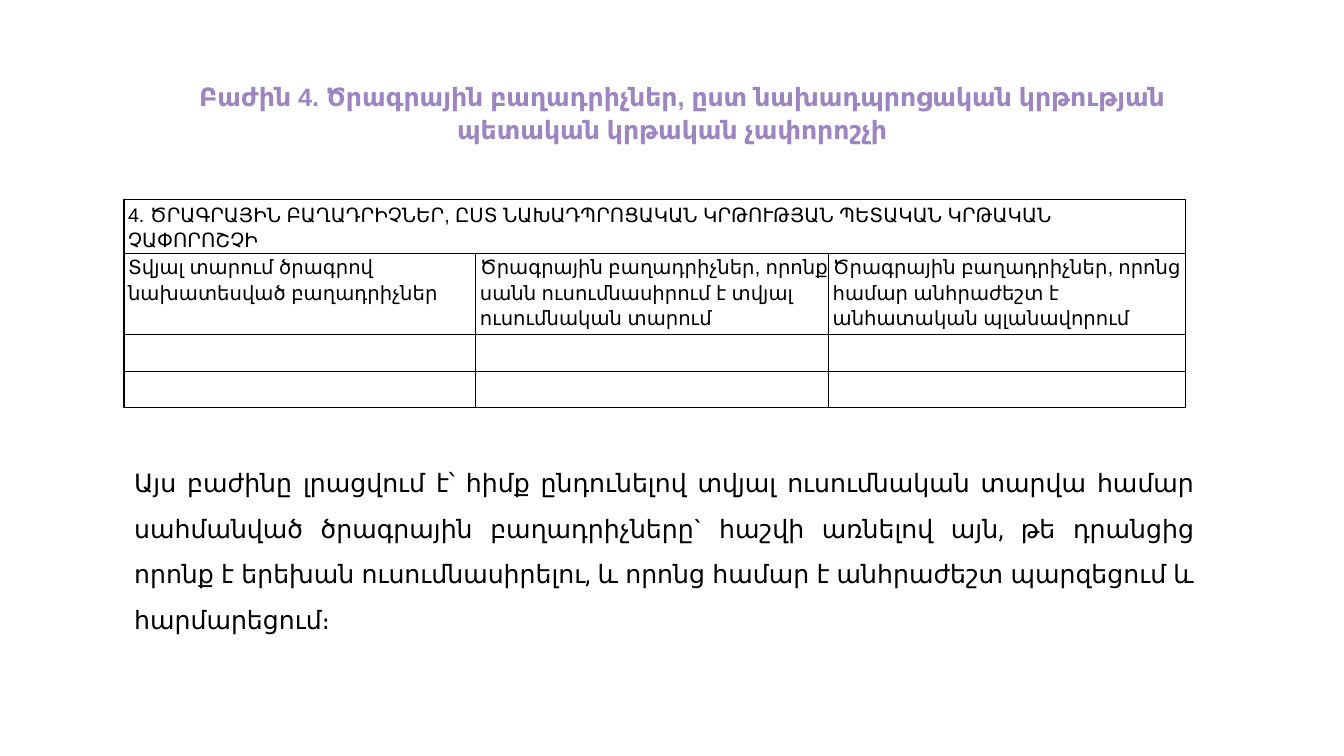
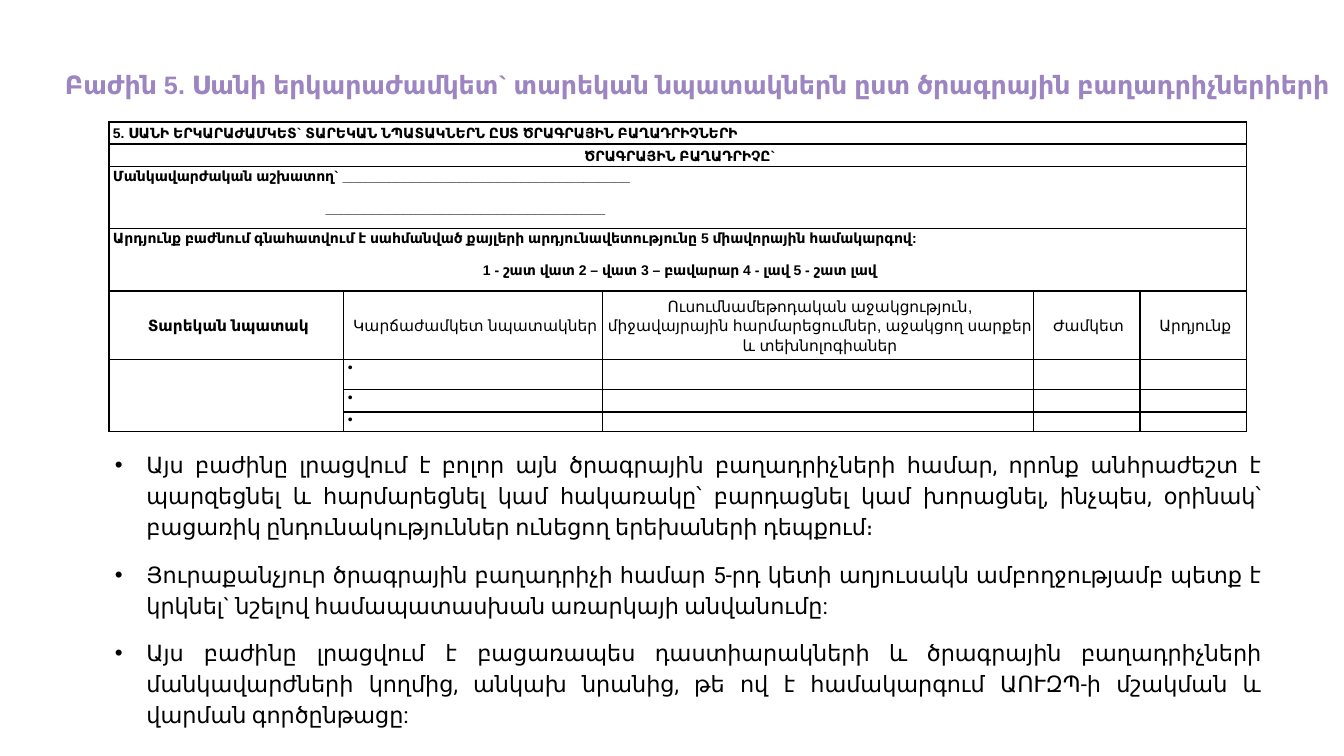
from dataclasses import dataclass
from typing import Any, NamedTuple

from lxml.etree import SubElement
from pptx import Presentation as new_presentation
from pptx.dml.color import RGBColor
from pptx.enum.text import MSO_ANCHOR as Anchor, MSO_AUTO_SIZE as AutoSize, PP_ALIGN as Align
from pptx.oxml.ns import qn
from pptx.presentation import Presentation
from pptx.shapes.placeholder import SlidePlaceholder
from pptx.slide import Slide
from pptx.table import _Cell as TableCell
from pptx.text.text import TextFrame, _Paragraph as TextParagraph
from pptx.util import Pt


@dataclass(frozen=True)
class Theme:
    title_color: str = "9C85C0"
    text_color: str = "000000"
    cell_color: str = "FFFFFF"
    border_color: str = "000000"
    border_width: float = 1
    cell_inset: float = 2.88
    title_font: str = "Arial"
    body_font: str = "Roboto"
    title_size: float = 18
    lead_size: float = 18
    list_size: float = 16
    table_size: float = 14
    form_size: float = 10
    heading_size: float = 11


THEME = Theme()


class Box(NamedTuple):
    left: float
    top: float
    width: float
    height: float


@dataclass(frozen=True)
class Run:
    text: str
    size: float
    font: str = THEME.title_font
    color: str = THEME.text_color
    bold: bool = False


@dataclass(frozen=True)
class Paragraph:
    runs: tuple[Run, ...]
    align: Align = Align.LEFT
    line_spacing: float = 1.15
    space_after: float = 10
    margin: float = 0
    indent: float = 0
    bullet: str = ""


@dataclass(frozen=True)
class Cell:
    row: int
    column: int
    paragraphs: tuple[Paragraph, ...]
    anchor: Anchor = Anchor.TOP


@dataclass(frozen=True)
class Grid:
    left: float
    top: float
    columns: tuple[float, ...]
    rows: tuple[float, ...]
    cells: tuple[Cell, ...]
    spans: tuple[tuple[int, int, int, int], ...]
    blank_size: float


@dataclass(frozen=True)
class Page:
    title: Paragraph
    title_box: Box
    body: tuple[Paragraph, ...]
    body_box: Box
    grid: Grid


def apply(target: Any, formats: dict[str, Any]) -> None:
    for name, value in formats.items():
        setattr(target, name, value)


def fill_paragraph(target: TextParagraph, paragraph: Paragraph) -> None:
    apply(target, {
        "alignment": paragraph.align,
        "line_spacing": paragraph.line_spacing,
        "space_before": Pt(0),
        "space_after": Pt(paragraph.space_after),
    })
    properties = target._p.get_or_add_pPr()
    properties.set("marL", str(Pt(paragraph.margin)))
    properties.set("indent", str(Pt(paragraph.indent)))
    if paragraph.bullet:
        SubElement(properties, qn("a:buFont"), typeface=THEME.title_font)
        SubElement(properties, qn("a:buChar"), char=paragraph.bullet)
    else:
        SubElement(properties, qn("a:buNone"))
    for item in paragraph.runs:
        run = target.add_run()
        run.text = item.text
        apply(run.font, {"name": item.font, "size": Pt(item.size), "bold": item.bold})
        run.font.color.rgb = RGBColor.from_string(item.color)


def fill_text(frame: TextFrame, paragraphs: tuple[Paragraph, ...]) -> None:
    for index, paragraph in enumerate(paragraphs):
        target = frame.add_paragraph() if index else frame.paragraphs[0]
        fill_paragraph(target, paragraph)


def fill_placeholder(shape: SlidePlaceholder, box: Box, paragraphs: tuple[Paragraph, ...]) -> None:
    apply(shape, {name: Pt(value) for name, value in box._asdict().items()})
    apply(shape.text_frame, {
        "word_wrap": True,
        "auto_size": AutoSize.SHAPE_TO_FIT_TEXT,
        "vertical_anchor": Anchor.TOP,
    })
    fill_text(shape.text_frame, paragraphs)


def style_cell(cell: TableCell) -> None:
    apply(cell, {
        "margin_left": Pt(THEME.cell_inset),
        "margin_top": 0,
        "margin_right": 0,
        "margin_bottom": 0,
    })
    properties = cell._tc.get_or_add_tcPr()
    for side in ("a:lnL", "a:lnR", "a:lnT", "a:lnB"):
        line = SubElement(properties, qn(side), w=str(Pt(THEME.border_width)))
        fill = SubElement(line, qn("a:solidFill"))
        SubElement(fill, qn("a:srgbClr"), val=THEME.border_color)
    cell.fill.solid()
    cell.fill.fore_color.rgb = RGBColor.from_string(THEME.cell_color)


def draw_grid(slide: Slide, grid: Grid) -> None:
    frame = slide.shapes.add_table(
        len(grid.rows), len(grid.columns), Pt(grid.left), Pt(grid.top),
        Pt(sum(grid.columns)), Pt(sum(grid.rows)))
    table = frame.table
    apply(table, {"first_row": False, "horz_banding": False})
    for column, width in zip(table.columns, grid.columns):
        column.width = Pt(width)
    for row, height in zip(table.rows, grid.rows):
        row.height = Pt(height)
    contents = {(cell.row, cell.column): cell for cell in grid.cells}
    for row in range(len(grid.rows)):
        for column in range(len(grid.columns)):
            target = table.cell(row, column)
            style_cell(target)
            content = contents.get((row, column))
            if content:
                target.vertical_anchor = content.anchor
                fill_text(target.text_frame, content.paragraphs)
            else:
                SubElement(target.text_frame.paragraphs[0]._p, qn("a:endParaRPr"),
                           sz=str(int(grid.blank_size * 100)))
    for top, left, bottom, right in grid.spans:
        table.cell(top, left).merge(table.cell(bottom, right))


def draw_page(presentation: Presentation, page: Page) -> None:
    slide = presentation.slides.add_slide(presentation.slide_layouts[1])
    fill_placeholder(slide.shapes.title, page.title_box, (page.title,))
    fill_placeholder(slide.placeholders[1], page.body_box, page.body)
    draw_grid(slide, page.grid)


def title(text: str, line_spacing: float) -> Paragraph:
    run = Run(text, THEME.title_size, color=THEME.title_color, bold=True)
    return Paragraph((run,), Align.CENTER, line_spacing, 8, indent=14.4)


def bullet(*runs: Run) -> Paragraph:
    return Paragraph(runs, Align.JUSTIFY, space_after=12, margin=22.5, indent=-22.5, bullet="•")


def list_run(text: str, font: str = THEME.body_font) -> Run:
    return Run(text, THEME.list_size, font)


def table_text(text: str) -> tuple[Paragraph, ...]:
    return (Paragraph((Run(text, THEME.table_size),)),)


def form_text(text: str, align: Align = Align.LEFT, indent: float = 0) -> Paragraph:
    return Paragraph((Run(text, THEME.form_size, bold=True),), align, indent=indent)


def heading(text: str, bold: bool) -> tuple[Paragraph, ...]:
    return (Paragraph((Run(text, THEME.heading_size, bold=bold),), Align.CENTER),)


COMPONENT_HEADINGS = (
    "Տվյալ տարում ծրագրով նախատեսված բաղադրիչներ",
    "Ծրագրային բաղադրիչներ, որոնք սանն ուսումնասիրում է տվյալ ուսումնական տարում",
    "Ծրագրային բաղադրիչներ, որոնց համար անհրաժեշտ է անհատական պլանավորում",
)
GOAL_HEADINGS = (
    "Տարեկան նպատակ",
    "Կարճաժամկետ նպատակներ",
    "Ուսումնամեթոդական աջակցություն, միջավայրային հարմարեցումներ, աջակցող սարքեր և տեխնոլոգիաներ",
    "Ժամկետ",
    "Արդյունք",
)

COMPONENTS = Page(
    title("Բաժին 4. Ծրագրային բաղադրիչներ, ըստ նախադպրոցական կրթության պետական կրթական չափորոշչի", 1.07),
    Box(69.8, 53.3, 820.8, 52.6),
    (Paragraph((Run(
        "Այս բաժինը լրացվում է՝ հիմք ընդունելով տվյալ ուսումնական տարվա համար սահմանված "
        "ծրագրային բաղադրիչները` հաշվի առնելով այն, թե դրանցից որոնք է երեխան ուսումնասիրելու, "
        "և որոնց համար է անհրաժեշտ պարզեցում և հարմարեցում։",
        THEME.lead_size, THEME.body_font),), Align.JUSTIFY, 1.5, 8),),
    Box(88.6, 319.7, 771.8, 102.2),
    Grid(
        88.6, 142.6, (251.3, 252, 254.9), (25.9, 54, 25.9, 25.9),
        (
            Cell(0, 0, table_text(
                "4. ԾՐԱԳՐԱՅԻՆ ԲԱՂԱԴՐԻՉՆԵՐ, ԸՍՏ ՆԱԽԱԴՊՐՈՑԱԿԱՆ ԿՐԹՈՒԹՅԱՆ ՊԵՏԱԿԱՆ ԿՐԹԱԿԱՆ ՉԱՓՈՐՈՇՉԻ"),
                Anchor.MIDDLE),
            *(Cell(1, column, table_text(text)) for column, text in enumerate(COMPONENT_HEADINGS)),
        ),
        ((0, 0, 0, 2),), THEME.table_size),
)

GOALS = Page(
    title("Բաժին 5. Սանի երկարաժամկետ` տարեկան նպատակներն ըստ ծրագրային բաղադրիչներիերի", 1.15),
    Box(21.6, 42.5, 938.9, 30.2),
    (
        bullet(list_run(
            "Այս բաժինը լրացվում է բոլոր այն ծրագրային բաղադրիչների համար, որոնք անհրաժեշտ է "
            "պարզեցնել և հարմարեցնել կամ հակառակը՝ բարդացնել կամ խորացնել, ինչպես, օրինակ՝ "
            "բացառիկ ընդունակություններ ունեցող երեխաների դեպքում։")),
        bullet(list_run(
            "Յուրաքանչյուր ծրագրային բաղադրիչի համար 5-րդ կետի աղյուսակն ամբողջությամբ պետք է "
            "կրկնել` նշելով համապատասխան առարկայի անվանումը:")),
        bullet(
            list_run("Այս բաժինը լրացվում է ", THEME.title_font),
            list_run(
                "բացառապես դաստիարակների և ծրագրային բաղադրիչների մանկավարժների կողմից, անկախ նրանից, "
                "թե ով է համակարգում ԱՈՒԶՊ-ի մշակման և վարման գործընթացը:")),
    ),
    Box(74.9, 316.1, 833.8, 185.8),
    Grid(
        77.8, 87.1, (167.8, 185, 307.4, 76.3, 76.3),
        (15.8, 15.8, 44.6, 44.6, 49, 21.6, 15.8, 13.7),
        (
            Cell(0, 0, (form_text(
                "5. ՍԱՆԻ ԵՐԿԱՐԱԺԱՄԿԵՏ` ՏԱՐԵԿԱՆ ՆՊԱՏԱԿՆԵՐՆ ԸՍՏ ԾՐԱԳՐԱՅԻՆ ԲԱՂԱԴՐԻՉՆԵՐԻ"),), Anchor.MIDDLE),
            Cell(1, 0, (form_text("ԾՐԱԳՐԱՅԻՆ ԲԱՂԱԴՐԻՉԸ`", Align.CENTER),), Anchor.MIDDLE),
            Cell(2, 0, (
                form_text("Մանկավարժական աշխատող` " + "_" * 37),
                form_text("_" * 36, indent=151.9))),
            Cell(3, 0, (
                form_text("Արդյունք բաժնում գնահատվում է սահմանված քայլերի արդյունավետությունը "
                          "5 միավորային համակարգով:"),
                form_text("1 - շատ վատ 2 – վատ 3 – բավարար 4 - լավ 5 - շատ լավ", Align.CENTER))),
            *(Cell(4, column, heading(text, column == 0), Anchor.MIDDLE)
              for column, text in enumerate(GOAL_HEADINGS)),
            *(Cell(row, 1, (Paragraph((Run("•", THEME.form_size),), line_spacing=1, space_after=0),))
              for row in range(5, 8)),
        ),
        (*((row, 0, row, 4) for row in range(4)), (5, 0, 7, 0)), THEME.form_size),
)


def main() -> None:
    presentation = new_presentation()
    apply(presentation, {"slide_width": Pt(960), "slide_height": Pt(540)})
    for page in (COMPONENTS, GOALS):
        draw_page(presentation, page)
    presentation.save("out.pptx")


if __name__ == "__main__":
    main()
